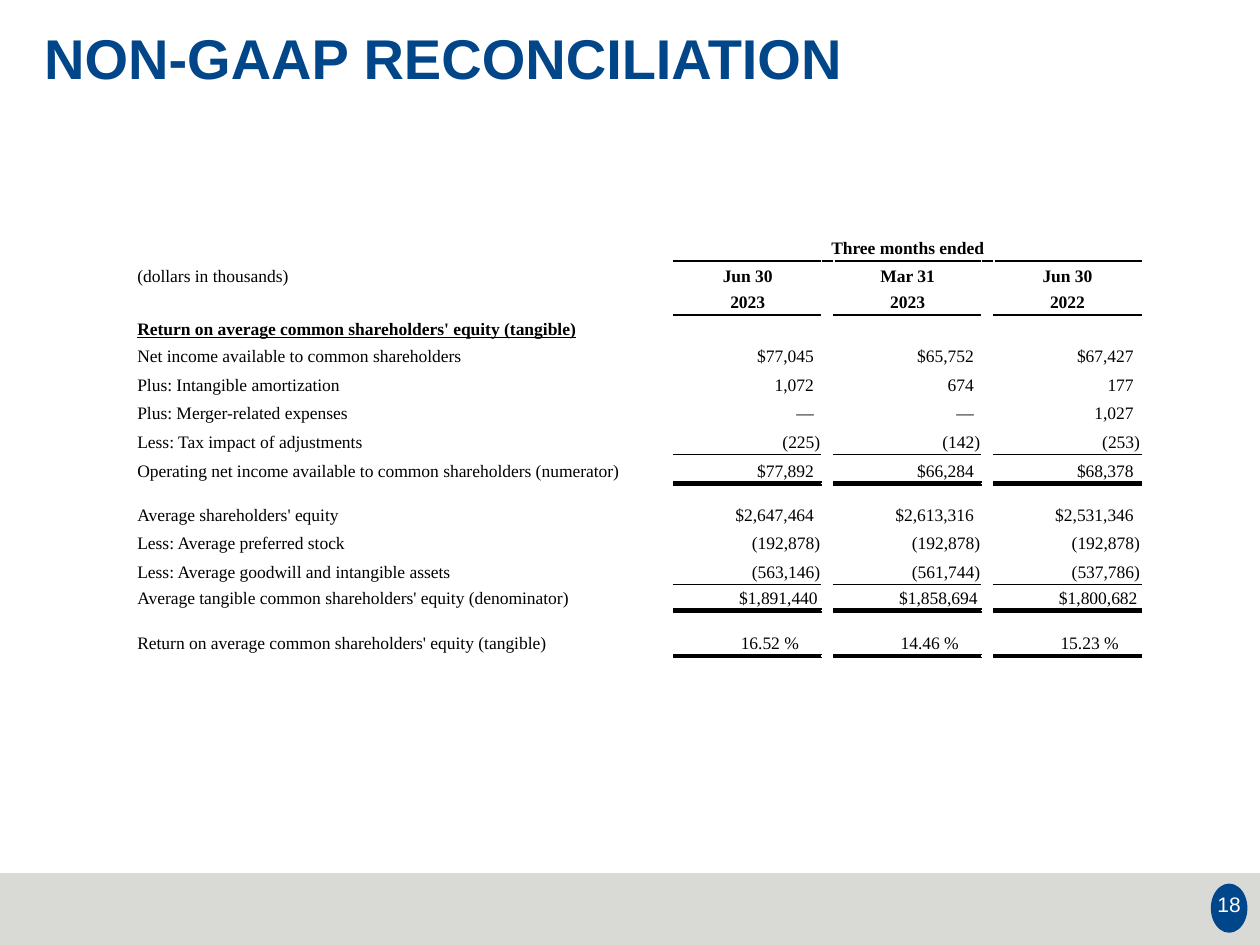
import pptx
import pptx.util
import pptx.dml.color
import pptx.enum.shapes
import pptx.enum.text
import pptx.oxml
import pptx.oxml.ns

In, Pt = pptx.util.Inches, pptx.util.Pt
ALIGN, ANCHOR = pptx.enum.text.PP_ALIGN, pptx.enum.text.MSO_ANCHOR
SHAPE = pptx.enum.shapes.MSO_SHAPE


def color(hex_value):
    return pptx.dml.color.RGBColor.from_string(hex_value)


def write(p, text, size, face, hex_value, align=ALIGN.LEFT, **extra):
    p.alignment = align
    r = p.add_run()
    r.text = text
    formats = {"size": Pt(size), "name": face, **extra}
    for key, value in formats.items():
        setattr(r.font, key, value)
    r.font.color.rgb = color(hex_value)


prs = pptx.Presentation()
prs.slide_width, prs.slide_height = In(10), In(7.5)
px, py = prs.slide_width / 100, prs.slide_height / 100
s = prs.slides.add_slide(prs.slide_layouts[5])

for kind, x, y, w, h, fill in [
    (SHAPE.RECTANGLE, 0, 92.4, 100, 7.6, "D9D9D6"),
    (SHAPE.OVAL, 96.1, 93.5, 2.9, 5.2, "00468B"),
]:
    sp = s.shapes.add_shape(kind, int(x * px), int(y * py), int(w * px), int(h * py))
    sp.shadow.inherit = False
    sp.fill.solid()
    sp.fill.fore_color.rgb = color(fill)
    sp.line.fill.background()

title = s.shapes.title
number = s.shapes.add_textbox(0, 0, 0, 0)
for sp, x, y, w, h, anchor in [
    (title, 2.5, 2.5, 96.7, 15.2, ANCHOR.TOP),
    (number, 95.2, 93.3, 4.7, 5.2, ANCHOR.MIDDLE),
]:
    sp.left, sp.top, sp.width, sp.height = int(x * px), int(y * py), int(w * px), int(h * py)
    formats = {
        "word_wrap": True, "auto_size": pptx.enum.text.MSO_AUTO_SIZE.NONE,
        "vertical_anchor": anchor, "margin_left": In(0.1), "margin_right": In(0.1),
        "margin_top": In(0.06), "margin_bottom": In(0.1),
    }
    for key, value in formats.items():
        setattr(sp.text_frame, key, value)

p = title.text_frame.paragraphs[0]
p.line_spacing = 0.9
write(p, "NON-GAAP RECONCILIATION", 32, "Arial", "004689", bold=True)
write(number.text_frame.paragraphs[0], "18", 12, "Arial", "FFFFFF", ALIGN.CENTER)

rows = [
    (0.21, "", ["Three months ended", "", ""]),
    (0.22, "(dollars in thousands)", ["Jun 30", "Mar 31", "Jun 30"]),
    (0.21, "", ["2023", "2023", "2022"]),
    (0.21, "Return on average common shareholders' equity (tangible)", ["", "", ""]),
    (0.22, "Net income available to common shareholders", ["$77,045", "$65,752", "$67,427"]),
    (0.23, "Plus: Intangible amortization", ["1,072", "674", "177"]),
    (0.22, "Plus: Merger-related expenses", ["—", "—", "1,027"]),
    (0.23, "Less: Tax impact of adjustments", ["(225)", "(142)", "(253)"]),
    (0.23, "Operating net income available to common shareholders (numerator)",
     ["$77,892", "$66,284", "$68,378"]),
    (0.14, "", ["", "", ""]),
    (0.21, "Average shareholders' equity", ["$2,647,464", "$2,613,316", "$2,531,346"]),
    (0.22, "Less: Average preferred stock", ["(192,878)", "(192,878)", "(192,878)"]),
    (0.23, "Less: Average goodwill and intangible assets", ["(563,146)", "(561,744)", "(537,786)"]),
    (0.21, "Average tangible common shareholders' equity (denominator)",
     ["$1,891,440", "$1,858,694", "$1,800,682"]),
    (0.14, "", ["", "", ""]),
    (0.22, "Return on average common shareholders' equity (tangible)",
     ["16.52 %", "14.46 %", "15.23 %"]),
]
cols = [3.72, 0.57, 1.17, 0.04, 1.17, 0.04, 1.17]
rules = {0: 1, 2: 1, 7: 1, 8: 3, 12: 1, 13: 3, 15: 3}
merged_labels = [3, 4, 8, 10, 12, 13, 15]
header_rows, section_row, denominator_row = range(3), 3, 13

frame = s.shapes.add_table(len(rows), len(cols), int(10.6 * px), int(24.8 * py),
                           In(sum(cols)), In(sum(row[0] for row in rows)))
table = frame.table
table.first_row = table.horz_banding = False
for column, width in zip(table.columns, cols):
    column.width = In(width)
for row, (height, label, values) in zip(table.rows, rows):
    row.height = In(height)

table.cell(0, 2).merge(table.cell(0, 6))
for i in merged_labels:
    table.cell(i, 0).merge(table.cell(i, 1))

for i, (height, label, values) in enumerate(rows):
    for j, text in enumerate([label, "", values[0], "", values[1], "", values[2]]):
        cell = table.cell(i, j)
        left, right, align, extra = 0.03, 0.03, ALIGN.LEFT, {}
        if i in header_rows and j > 1:
            align, extra = ALIGN.CENTER, {"bold": True}
        elif i == section_row:
            extra = {"bold": True, "underline": True}
        elif "%" in text:
            left = 0.53
        elif j > 1:
            left, align = 0, ALIGN.RIGHT
            right = 0.01 if text.endswith(")") else 0.03 if i == denominator_row else 0.06
        formats = {
            "margin_left": In(left), "margin_right": In(right), "margin_top": 0,
            "margin_bottom": In(0.02), "vertical_anchor": ANCHOR.BOTTOM,
        }
        for key, value in formats.items():
            setattr(cell, key, value)
        p = cell.text_frame.paragraphs[0]
        if text:
            p.line_spacing = 1.0
            write(p, text, 10, "Times New Roman", "000000", align, **extra)
        else:
            p._p.get_or_add_endParaRPr().set("sz", "600")

        ruled = j in (2, 4, 6)
        top = rules.get(i - 1, 0) if ruled or (i == 1 and j > 1) else 0
        bottom = rules.get(i, 0) if ruled or (i == 0 and j > 1) else 0
        tc_pr = cell._tc.get_or_add_tcPr()
        for side, weight in [("L", 0), ("R", 0), ("T", top), ("B", bottom)]:
            line = "000000" if weight else "FFFFFF"
            tc_pr.append(pptx.oxml.parse_xml(
                f'<a:ln{side} {pptx.oxml.ns.nsdecls("a")} w="{Pt(weight or 1)}">'
                f'<a:solidFill><a:srgbClr val="{line}"/></a:solidFill></a:ln{side}>'))
        cell.fill.background()

prs.save("out.pptx")
